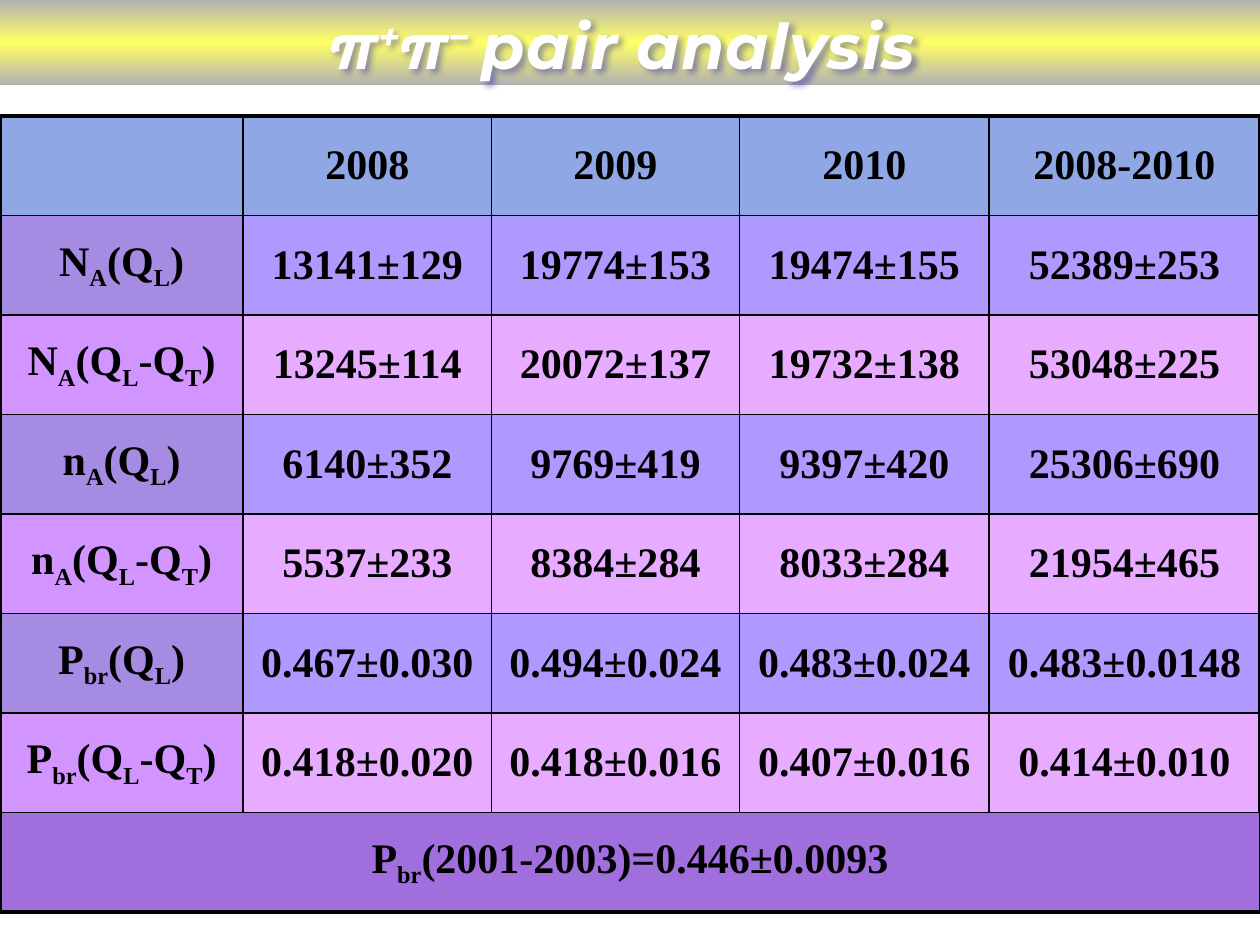
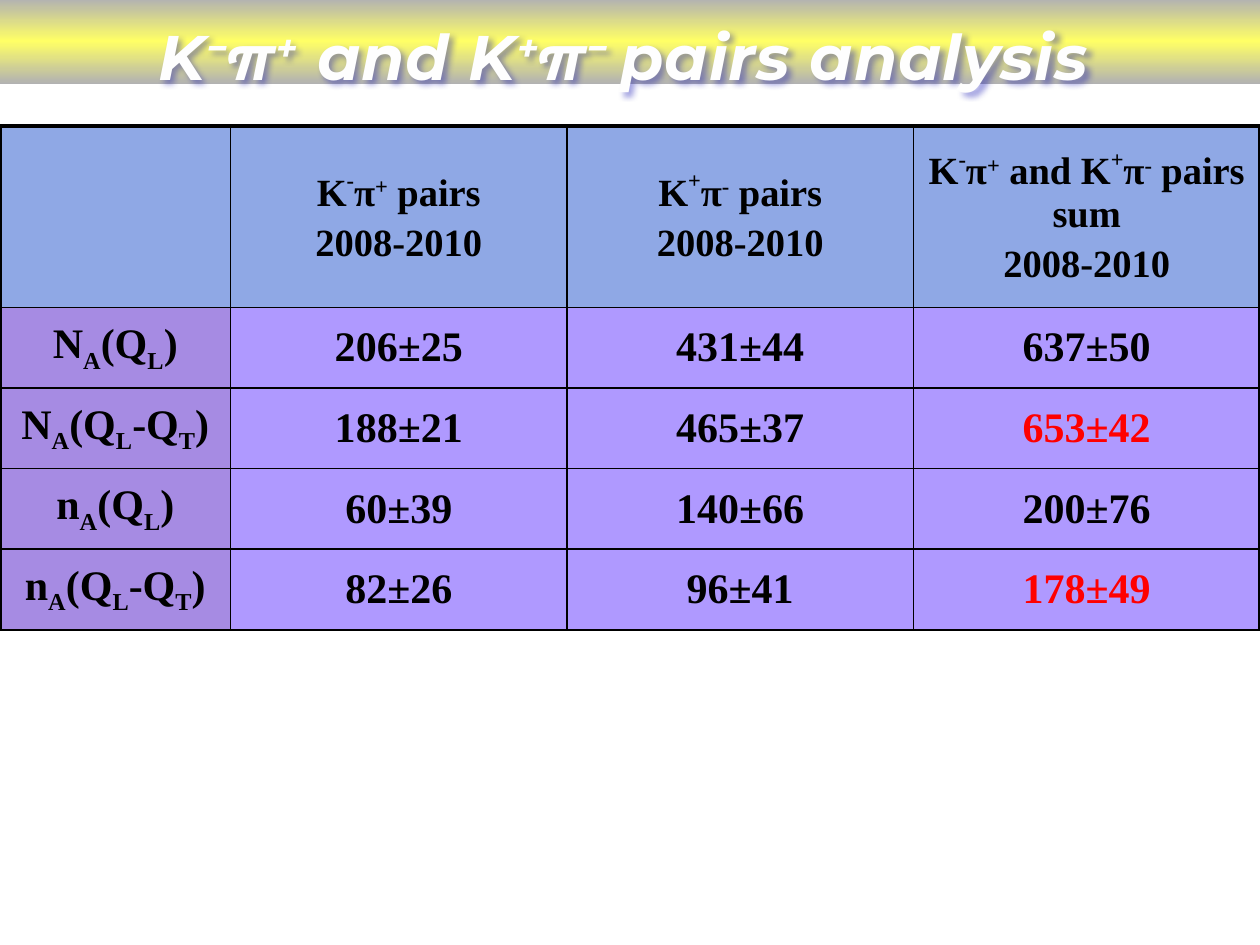
from lxml import etree
from pptx import Presentation
from pptx.dml.color import RGBColor
from pptx.enum.shapes import MSO_SHAPE
from pptx.enum.text import MSO_ANCHOR, MSO_AUTO_SIZE, PP_ALIGN
from pptx.oxml.ns import qn
from pptx.util import Inches, Pt

RECT = MSO_SHAPE.RECTANGLE
TOP, MIDDLE = MSO_ANCHOR.TOP, MSO_ANCHOR.MIDDLE
CENTER = PP_ALIGN.CENTER
FIXED = MSO_AUTO_SIZE.NONE

WIDE, HIGH = 10, 7.5
BAND = 0.09 * HIGH
TITLE_LEFT, TITLE_WIDE, TITLE_HIGH = 0.06 * WIDE, 0.87 * WIDE, 0.56
TITLE_FONT, TABLE_FONT = "Montserrat", "Times New Roman"
BLACK, WHITE, RED, NAVY = "000000", "FEFEFE", "FF0000", "1C1CB5"
GREY, YELLOW = "B2B2B2", "FFFF66"
HEAD, FOOT = "8FA8E5", "A16FDD"
BLUE = ("A68BE3", "AF99FF")  # label cell, value cell
PINK = ("D295FF", "E7ABFF")
THIN, THICK = 1, 2.25

# Text is cut at "|"; a leading mark shifts the baseline of its piece
MARKS = {"_": -25, "^": 30, "*": 46}
YEARS = "2008-2010"
NA, NAT = "N|_A|(Q|_L|)", "N|_A|(Q|_L|-Q|_T|)"
SMALL, SMALLT = "n|_A|(Q|_L|)", "n|_A|(Q|_L|-Q|_T|)"
PBR, PBRT = "P|_br|(Q|_L|)", "P|_br|(Q|_L|-Q|_T|)"

PION = [
    ["", "2008", "2009", "2010", YEARS],
    [NA, "13141±129", "19774±153", "19474±155", "52389±253"],
    [NAT, "13245±114", "20072±137", "19732±138", "53048±225"],
    [SMALL, "6140±352", "9769±419", "9397±420", "25306±690"],
    [SMALLT, "5537±233", "8384±284", "8033±284", "21954±465"],
    [PBR, "0.467±0.030", "0.494±0.024", "0.483±0.024", "0.483±0.0148"],
    [PBRT, "0.418±0.020", "0.418±0.016", "0.407±0.016", "0.414±0.010"],
    ["P|_br|(2001-2003)=0.446±0.0093", "", "", "", ""],
]
KAON = [
    ["", "K|*-|π|^+| pairs\n" + YEARS, "K|*+|π|^-| pairs\n" + YEARS,
     "K|*-|π|^+| and K|*+|π|^-| pairs sum\n" + YEARS],
    [NA, "206±25", "431±44", "637±50"],
    [NAT, "188±21", "465±37", "653±42"],
    [SMALL, "60±39", "140±66", "200±76"],
    [SMALLT, "82±26", "96±41", "178±49"],
]


def ink(color):
    return RGBColor.from_string(color)


def node(tag, *kids, **attrs):
    item = etree.Element(qn("a:" + tag), {k: str(v) for k, v in attrs.items()})
    item.extend(kids)
    return item


def solid(color):
    return node("solidFill", node("srgbClr", val=color))


def write(para, text, font, size, color):
    """Add the pieces of a text run by run, and return the runs."""
    para.alignment = CENTER
    runs = []
    for piece in text.split("|"):
        shift = MARKS.get(piece[0], 0)
        run = para.add_run()
        run.text = piece[1:] if shift else piece
        run.font.name, run.font.size, run.font.bold = font, Pt(size), True
        run.font.color.rgb = ink(color)
        if shift:
            run.font._element.set("baseline", str(shift * 1000))
        runs.append(run)
    return runs


def add_band(slide, top):
    band = slide.shapes.add_shape(RECT, 0, Inches(top), Inches(WIDE), Inches(BAND))
    stops = [node("gs", node("srgbClr", val=color), pos=pos * 1000)
             for pos, color in ((0, GREY), (50, YELLOW), (100, GREY))]
    band._element.spPr.append(node(
        "gradFill", node("gsLst", *stops), node("lin", ang=5400000, scaled=0)))
    band.line.fill.background()
    band.shadow.inherit = False
    return band


def add_title(slide, text, top, band):
    title = slide.shapes.title
    title.left, title.top = Inches(TITLE_LEFT), Inches(top)
    title.width, title.height = Inches(TITLE_WIDE), Inches(TITLE_HIGH)
    band._element.addnext(title._element)  # lift above the band
    # Without a fill, the shadow falls from the letters
    title.fill.background()
    shade = node("outerShdw", node("srgbClr", node("alpha", val=40000), val=NAVY),
                 blurRad=41275, dist=28575, dir=2700000, algn="tl", rotWithShape=0)
    title._element.spPr.append(node("effectLst", shade))
    frame = title.text_frame
    frame.auto_size, frame.word_wrap = FIXED, True
    frame.vertical_anchor = TOP
    for run in write(frame.paragraphs[0], text, TITLE_FONT, 36, WHITE):
        run.font.italic = True
        props = run.font._element
        props.set("spc", "50")
        props.insert(0, node("ln", solid(NAVY), w=Pt(1)))


def edge(cell, widths):
    """Draw the left, right, top and bottom borders of a cell."""
    props = cell._tc.get_or_add_tcPr()
    for i, (side, width) in enumerate(zip("LRTB", widths)):
        props.insert(i, node("ln" + side, solid(BLACK), w=Pt(width)))


def fill_cell(cell, text, size, back, color):
    cell.fill.solid()
    cell.fill.fore_color.rgb = ink(back)
    cell.vertical_anchor = MIDDLE
    frame = cell.text_frame
    for i, line in enumerate(text.split("\n") if text else []):
        para = frame.add_paragraph() if i else frame.paragraphs[0]
        write(para, line, TABLE_FONT, size, color)
        para._p.get_or_add_pPr().insert(0, node("spcBef", node("spcPct", val=20000)))


def add_grid(slide, data, top, cols, rows, tones, head, base, reds=()):
    """Add a table; tones gives the label and value fills of each row."""
    table = slide.shapes.add_table(
        len(rows), len(cols), 0, Inches(top),
        Inches(sum(cols)), Inches(sum(rows))).table
    table.first_row = table.horz_banding = False
    for col, width in zip(table.columns, cols):
        col.width = Inches(width)
    for row, height in zip(table.rows, rows):
        row.height = Inches(height)
    for r, line in enumerate(data):
        for c, text in enumerate(line):
            cell = table.cell(r, c)
            fill_cell(cell, text, 24 if r else head, tones[r][min(c, 1)],
                      RED if (r, c) in reds else BLACK)
            edge(cell, (THIN if c else THICK,
                        THICK if c == len(cols) - 1 else THIN,
                        THIN if r else THICK,
                        base if r == len(rows) - 1 else THIN))
    return table


def main():
    deck = Presentation()
    deck.slide_width, deck.slide_height = Inches(WIDE), Inches(HIGH)
    plain = deck.slide_layouts[5]

    # Pion pairs
    slide = deck.slides.add_slide(plain)
    table = add_grid(slide, PION, 0.92, [1.93, 1.97, 1.97, 1.98, 2.15],
                     [0.79] * 8, [(HEAD, HEAD)] + [BLUE, PINK] * 3 + [(FOOT, FOOT)],
                     24, THICK)
    table.cell(7, 0).merge(table.cell(7, 4))
    add_title(slide, "π|^+|π|^− |pair analysis", 0, add_band(slide, 0))

    # Kaon and pion pairs
    slide = deck.slides.add_slide(plain)
    add_grid(slide, KAON, 1, [1.83, 2.67, 2.75, 2.75],
             [1.44] + [0.64] * 4, [(HEAD, HEAD)] + [BLUE] * 4,
             22, THIN, reds=((2, 3), (4, 3)))
    add_title(slide, "K|^−|π|^+| and K|^+|π|^− |pairs analysis", 0.09,
              add_band(slide, -0.01))

    deck.save("out.pptx")


if __name__ == "__main__":
    main()
